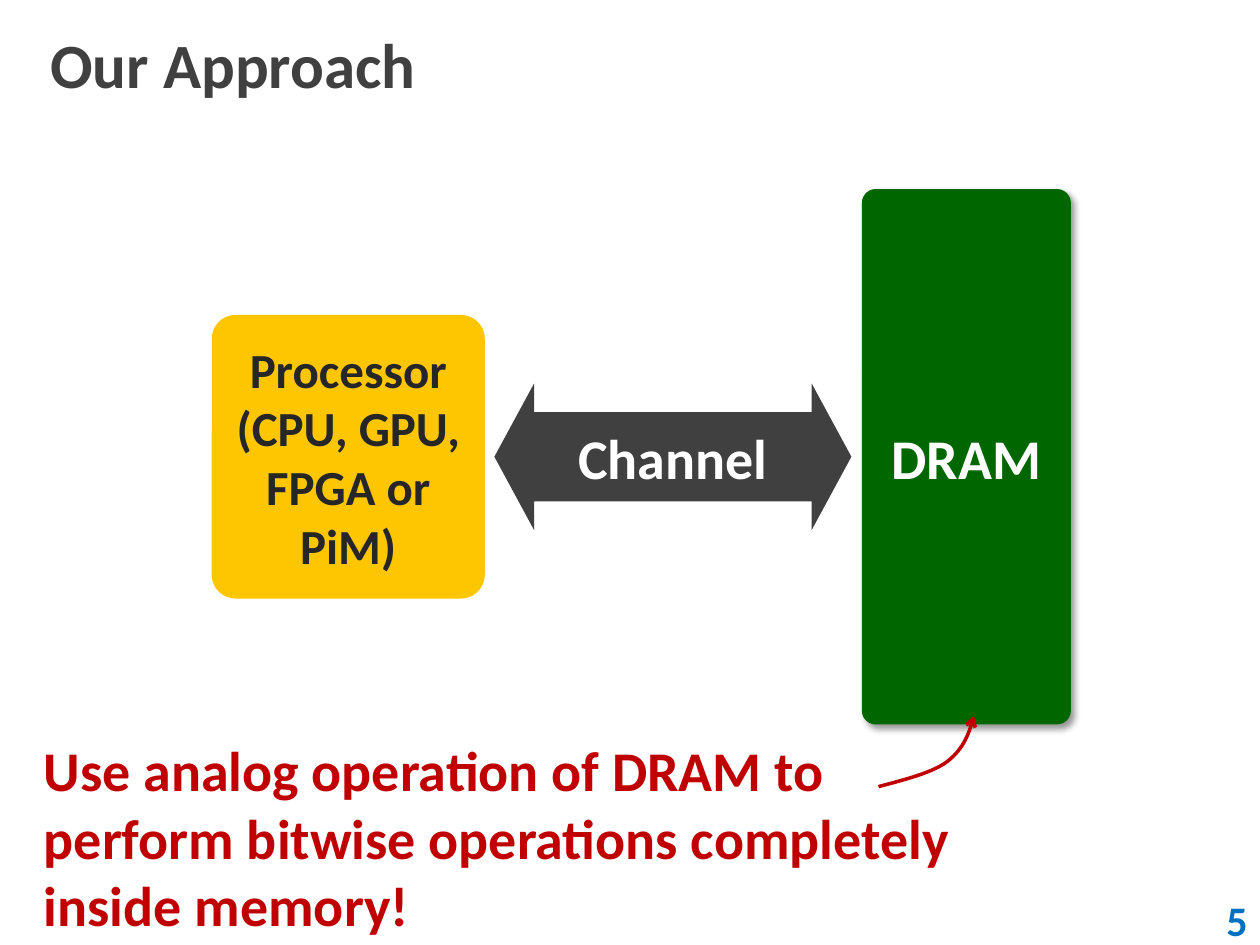
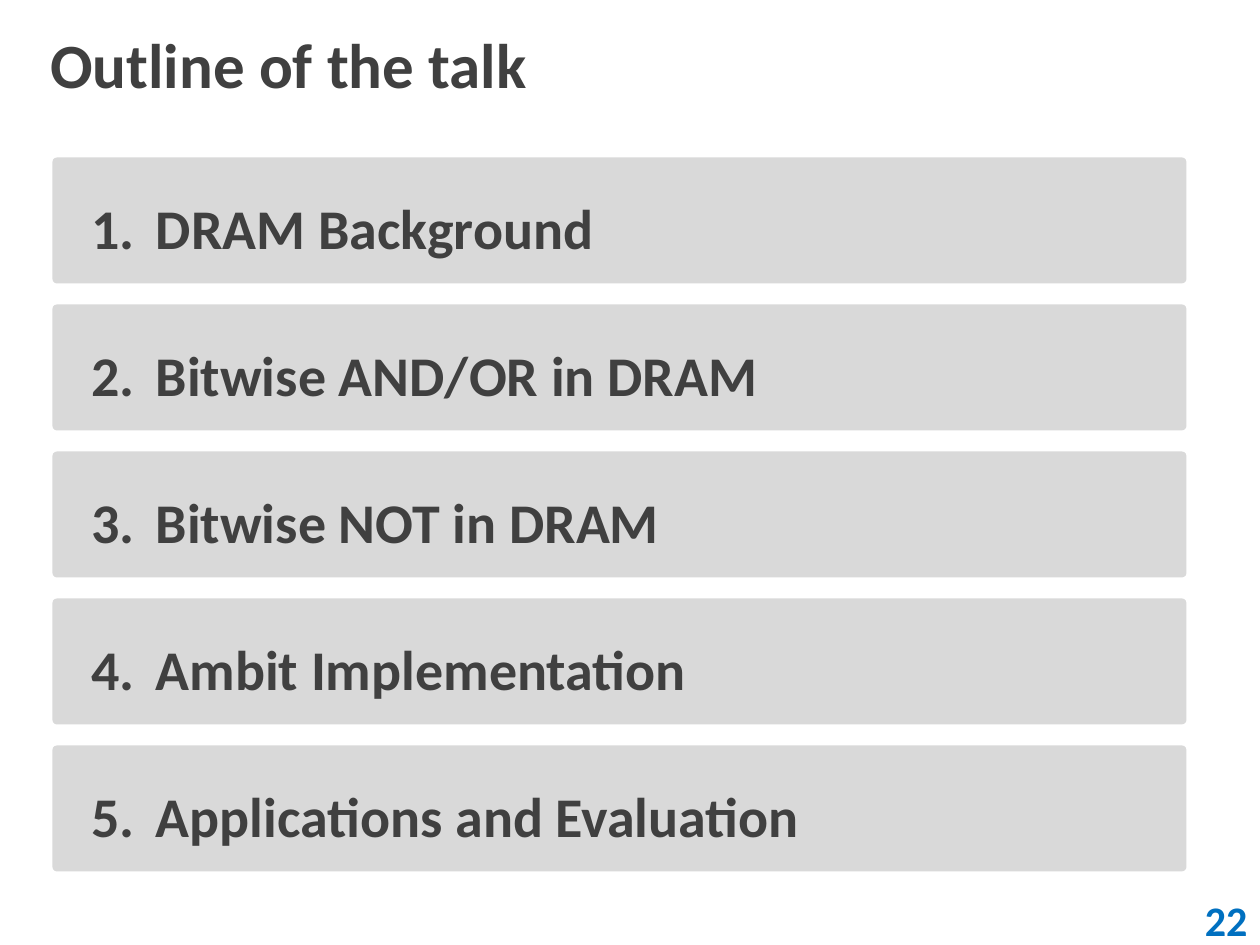
from lxml import etree
from pptx import Presentation
from pptx import util as u
from pptx.dml.color import RGBColor
from pptx.enum import shapes, text
from pptx.oxml import ns

WHITE = RGBColor(0xFF, 0xFF, 0xFF)
BLACK = RGBColor(0x00, 0x00, 0x00)
CHARCOAL = RGBColor(0x40, 0x40, 0x40)
NEAR_BLACK = RGBColor(0x26, 0x26, 0x26)
LIGHT_GRAY = RGBColor(0xD9, 0xD9, 0xD9)
BLUE = RGBColor(0x00, 0x70, 0xC0)
AMBER = RGBColor(0xFD, 0xC6, 0x00)
GREEN = RGBColor(0x00, 0x66, 0x00)
RED = RGBColor(0xC0, 0x00, 0x00)

PAGE_WIDTH, PAGE_HEIGHT = 720, 540
SHAPE = shapes.MSO_SHAPE
LEFT, CENTER, RIGHT = text.PP_ALIGN.LEFT, text.PP_ALIGN.CENTER, text.PP_ALIGN.RIGHT
MIDDLE, TOP = text.MSO_ANCHOR.MIDDLE, text.MSO_ANCHOR.TOP


def apply(target, values):
    for name, value in values.items():
        setattr(target, name, value)


def add_node(parent, tag, **attributes):
    node = etree.SubElement(parent, ns.qn(tag))
    for name, value in attributes.items():
        node.set(name, str(value))
    return node


def bezier(start, control_1, control_2, end, steps=16):
    """Return the points of a cubic curve that follow its start."""
    points = []
    for step in range(1, steps + 1):
        t = step / steps
        weights = ((1 - t) ** 3, 3 * t * (1 - t) ** 2, 3 * t ** 2 * (1 - t), t ** 3)
        corners = (start, control_1, control_2, end)
        points.append(tuple(sum(w * corner[axis] for w, corner in zip(weights, corners))
                            for axis in (0, 1)))
    return points


class SlideBuilder:
    font = "Calibri"

    def __init__(self, deck):
        self.deck = deck
        self.page = None

    def start(self, title, number):
        """Add a page with the shared title and page number."""
        self.page = self.deck.slides.add_slide(self.deck.slide_layouts[6])
        self.label((0, 0, PAGE_WIDTH, 72), title, 36, CHARCOAL, anchor=MIDDLE, inset=28.8)
        self.block(SHAPE.RECTANGLE, (576, 511.2, 144, 28.8), WHITE, str(number), 24, BLUE,
                   align=RIGHT)

    def fill_text(self, box, content, size, color, align=LEFT, anchor=MIDDLE, inset=7.2,
                  spacing=None, tab=None):
        frame = box.text_frame
        apply(frame, {"word_wrap": True, "vertical_anchor": anchor,
                      "margin_left": u.Pt(inset), "margin_right": u.Pt(7.2),
                      "margin_top": u.Pt(3.6), "margin_bottom": u.Pt(3.6)})
        for index, line in enumerate(content.split("\n")):
            para = frame.add_paragraph() if index else frame.paragraphs[0]
            apply(para, {"alignment": align, "line_spacing": spacing})
            if tab:
                tabs = add_node(para._p.get_or_add_pPr(), "a:tabLst")
                add_node(tabs, "a:tab", pos=u.Pt(tab), algn="l")
            span = para.add_run()
            span.text = line
            apply(span.font, {"name": self.font, "size": u.Pt(size), "bold": True})
            span.font.color.rgb = color

    def label(self, area, content, size, color, **layout):
        box = self.page.shapes.add_textbox(*map(u.Pt, area))
        self.fill_text(box, content, size, color, **layout)
        return box

    def block(self, kind, area, fill, content, size, color, adjust=(), **layout):
        box = self.page.shapes.add_shape(kind, *map(u.Pt, area))
        for index, value in enumerate(adjust):
            box.adjustments[index] = value
        box.shadow.inherit = False
        box.fill.solid()
        box.fill.fore_color.rgb = fill
        box.line.fill.background()
        self.fill_text(box, content, size, color, **layout)
        return box

    def cast_shadow(self, box):
        effects = box.element.spPr.find(ns.qn("a:effectLst"))
        shadow = add_node(effects, "a:outerShdw", blurRad=u.Pt(4), dist=u.Pt(3),
                          dir=45 * 60000, algn="tl", rotWithShape=0)
        shade = add_node(shadow, "a:srgbClr", val=BLACK)
        add_node(shade, "a:alpha", val=40000)

    def curved_arrow(self, start, segments, color, width):
        """Draw an arrow through cubic segments of (control, control, end)."""
        points = [start]
        for segment in segments:
            points += bezier(points[-1], *segment)
        (x, y), *rest = [tuple(map(u.Pt, point)) for point in points]
        builder = self.page.shapes.build_freeform(x, y)
        builder.add_line_segments(rest, close=False)
        arrow = builder.convert_to_shape()
        arrow.shadow.inherit = False
        arrow.fill.background()
        arrow.line.color.rgb = color
        arrow.line.width = u.Pt(width)
        add_node(arrow.element.spPr.find(ns.qn("a:ln")), "a:tailEnd", type="arrow")


def build_approach(builder):
    builder.start("Our Approach", 5)
    builder.block(SHAPE.ROUNDED_RECTANGLE, (121, 180, 156, 162), AMBER,
                  "Processor\n(CPU, GPU, FPGA or PiM)", 28, NEAR_BLACK,
                  adjust=[0.087], align=CENTER)
    dram = builder.block(SHAPE.ROUNDED_RECTANGLE, (492.5, 108, 119.5, 306), GREEN,
                         "DRAM", 32, WHITE, adjust=[0.067], align=CENTER)
    builder.cast_shadow(dram)
    builder.block(SHAPE.LEFT_RIGHT_ARROW, (282.5, 219, 204, 84), CHARCOAL,
                  "Channel", 32, WHITE, adjust=[0.608, 0.271], align=CENTER)
    claim = builder.label(
        (18, 417, 534, 85),
        "Use analog operation of DRAM to perform bitwise operations completely inside memory!",
        32, RED, anchor=TOP)
    claim.text_frame.auto_size = text.MSO_AUTO_SIZE.SHAPE_TO_FIT_TEXT
    builder.curved_arrow((502, 449.5),
                         [((517, 445.5), (533, 441.5), (541.5, 435)),
                          ((551, 427.5), (554, 418.5), (556.5, 409))], RED, 2)


def build_outline(builder):
    builder.start("Outline of the talk", 22)
    topics = ("DRAM Background", "Bitwise AND/OR in DRAM", "Bitwise NOT in DRAM",
              "Ambit Implementation", "Applications and Evaluation")
    height, gap = 72, 12
    for index, topic in enumerate(topics):
        builder.block(SHAPE.ROUNDED_RECTANGLE, (30, 90 + index * (height + gap), 648, height),
                      LIGHT_GRAY, f"{index + 1}.\t{topic}", 32, CHARCOAL,
                      adjust=[0.036], inset=21.6, spacing=1.2, tab=36.7)


def main():
    deck = Presentation()
    apply(deck, {"slide_width": u.Pt(PAGE_WIDTH), "slide_height": u.Pt(PAGE_HEIGHT)})
    builder = SlideBuilder(deck)
    build_approach(builder)
    build_outline(builder)
    deck.save("out.pptx")


if __name__ == "__main__":
    main()
